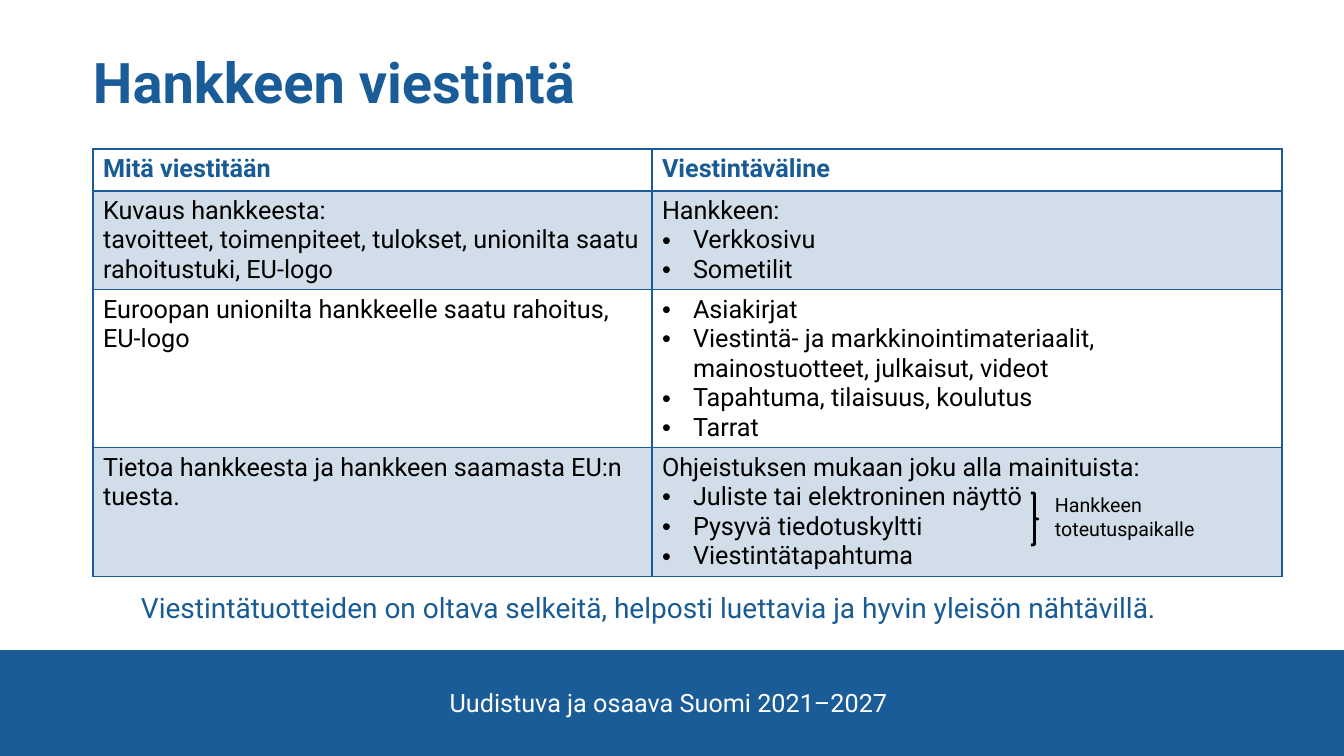
from lxml.etree import SubElement
from pptx import Presentation
from pptx.dml.color import RGBColor
from pptx.enum.shapes import MSO_SHAPE
from pptx.enum.text import MSO_ANCHOR, MSO_AUTO_SIZE, PP_ALIGN
from pptx.oxml.ns import qn
from pptx.util import Emu, Pt

BLUE, HEADING_BLUE, BLACK, WHITE = "195C98", "185B95", "000000", "FFFFFF"
BULLET = "• "
HEADINGS = ["Mitä viestitään", "Viestintäväline"]
# Each row: message, then the lines of its channel cell
ROWS = [
    (["Kuvaus hankkeesta: \vtavoitteet, toimenpiteet, tulokset, unionilta saatu "
      "rahoitustuki, EU-logo"],
     ["Hankkeen:", "• Verkkosivu", "• Sometilit"]),
    (["Euroopan unionilta hankkeelle saatu rahoitus, EU-logo"],
     ["• Asiakirjat",
      "• Viestintä- ja markkinointimateriaalit, mainostuotteet, julkaisut, videot",
      "• Tapahtuma, tilaisuus, koulutus", "• Tarrat"]),
    (["Tietoa hankkeesta ja hankkeen saamasta EU:n tuesta."],
     ["Ohjeistuksen mukaan joku alla mainituista:",
      "• Juliste tai elektroninen näyttö", "• Pysyvä tiedotuskyltti",
      "• Viestintätapahtuma"]),
]
COLUMN_WIDTHS = [559, 630]
ROW_HEIGHTS = [42, 98, 158, 129]


def px(length):
    return Emu(round(length * 914400 / 100.8))


def rgb(code):
    return RGBColor.from_string(code)


def apply(target, values):
    for name, value in values.items():
        setattr(target, name, value)


def style(paragraph, size, color, bold=False):
    for run in paragraph.runs:
        apply(run.font, {"name": "Roboto", "size": Pt(size), "bold": bold})
        run.font.color.rgb = rgb(color)


def set_frame(frame, anchor=MSO_ANCHOR.TOP):
    apply(frame, {"word_wrap": True, "auto_size": MSO_AUTO_SIZE.NONE,
                  "vertical_anchor": anchor, "margin_left": 0, "margin_right": 0,
                  "margin_top": 0, "margin_bottom": 0})


def add_label(slide, box, text, size, color, align=PP_ALIGN.LEFT):
    frame = slide.shapes.add_textbox(*map(px, box)).text_frame
    set_frame(frame)
    label = frame.paragraphs[0]
    label.text, label.alignment = text, align
    style(label, size, color)


def add_heading(slide, box):
    title = slide.shapes.title
    apply(title, dict(zip(("left", "top", "width", "height"), map(px, box))))
    set_frame(title.text_frame, MSO_ANCHOR.BOTTOM)
    heading = title.text_frame.paragraphs[0]
    heading.text = "Hankkeen viestintä"
    apply(heading, {"alignment": PP_ALIGN.LEFT, "line_spacing": 0.9})
    style(heading, 40, BLUE, True)


def add_footer(slide, box):
    left, top, width, _ = box
    band = slide.shapes.add_shape(MSO_SHAPE.RECTANGLE, *map(px, box))
    band.shadow.inherit = False
    band.fill.solid()
    band.fill.fore_color.rgb = rgb(BLUE)
    band.line.fill.background()
    add_label(slide, (left + 300, top + 37, width - 607, 34),
              "Uudistuva ja osaava Suomi 2021–2027", 18, WHITE, PP_ALIGN.CENTER)


def set_borders(cell, widths):
    for side, width in widths.items():
        border = SubElement(cell._tc.get_or_add_tcPr(), qn(f"a:ln{side}"), w=str(Pt(width)))
        SubElement(SubElement(border, qn("a:solidFill")), qn("a:srgbClr"), val=BLUE)


def set_fill(cell, tinted):
    if not tinted:
        cell.fill.background()
        return
    cell.fill.solid()
    cell.fill.fore_color.rgb = rgb(BLUE)
    tint = cell._tc.tcPr.find(qn("a:solidFill")).find(qn("a:srgbClr"))
    SubElement(tint, qn("a:alpha"), val="20000")


def fill_cell(cell, lines, color, bold):
    for index, line in enumerate(lines):
        frame = cell.text_frame
        entry = frame.add_paragraph() if index else frame.paragraphs[0]
        entry.text = line.removeprefix(BULLET)
        if line.startswith(BULLET):
            properties = entry._p.get_or_add_pPr()
            apply_indent = {"marL": str(px(31)), "indent": str(-px(31))}
            for name, value in apply_indent.items():
                properties.set(name, value)
            SubElement(properties, qn("a:buFont"), typeface="Arial")
            SubElement(properties, qn("a:buChar"), char=BULLET.strip())
        style(entry, 18, color, bold)


def add_channel_table(slide, box):
    table = slide.shapes.add_table(len(ROWS) + 1, len(HEADINGS), *map(px, box)).table
    apply(table, {"first_row": False, "horz_banding": False})
    for column, width in zip(table.columns, COLUMN_WIDTHS):
        column.width = px(width)
    for row, height in zip(table.rows, ROW_HEIGHTS):
        row.height = px(height)
    contents = [[[heading] for heading in HEADINGS], *ROWS]
    for r, row in enumerate(contents):
        header = r == 0
        for c, lines in enumerate(row):
            cell = table.cell(r, c)
            set_borders(cell, {"L": 1, "R": 1, "T": 2 if r == 1 else 1,
                               "B": 2 if header else 1})
            set_fill(cell, r % 2 == 1)
            fill_cell(cell, lines, HEADING_BLUE if header else BLACK, header)


def add_site_note(slide, box):
    left, top, width, height = box
    brace = slide.shapes.add_shape(MSO_SHAPE.RIGHT_BRACE, *map(px, (left, top, 7, height)))
    brace.shadow.inherit = False
    brace.fill.background()
    brace.line.color.rgb = rgb(BLACK)
    brace.line.width = Pt(2)
    add_label(slide, (left + 24, top, width - 24, 47),
              "Hankkeen toteutuspaikalle", 14, BLACK)


def main():
    deck = Presentation()
    apply(deck, {"slide_width": px(1344), "slide_height": px(756)})
    slide = deck.slides.add_slide(deck.slide_layouts[5])
    add_footer(slide, (0, 650, 1344, 106))
    add_heading(slide, (93, 39, 1159, 77))
    add_channel_table(slide, (93, 149, sum(COLUMN_WIDTHS), sum(ROW_HEIGHTS)))
    add_site_note(slide, (1031, 493, 208, 52))
    add_label(slide, (141, 590, 1061, 34),
              "Viestintätuotteiden on oltava selkeitä, helposti luettavia ja hyvin "
              "yleisön nähtävillä.", 20, HEADING_BLUE)
    deck.save("out.pptx")


if __name__ == "__main__":
    main()
